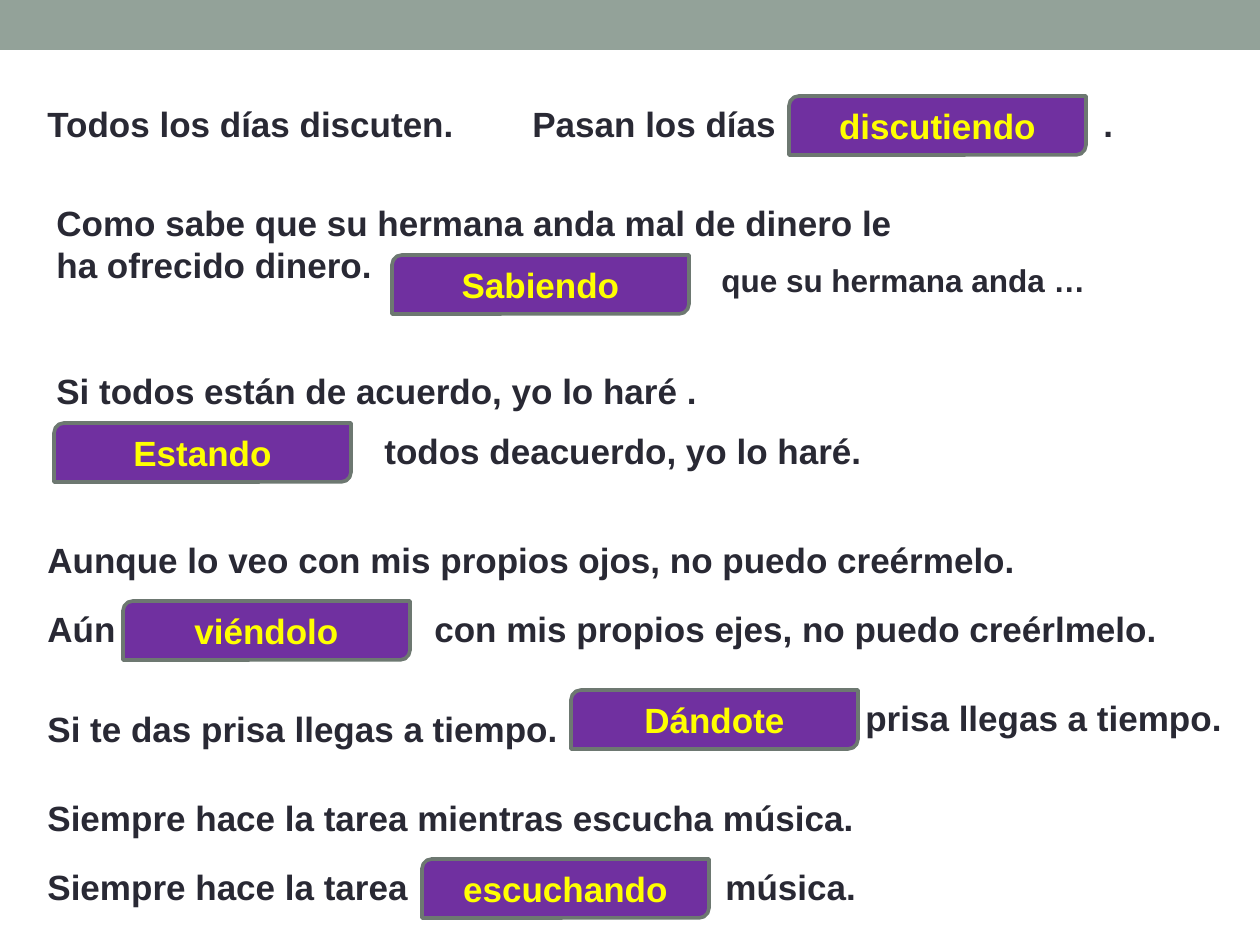
from pptx import Presentation
from pptx.dml.color import RGBColor
from pptx.enum.shapes import MSO_SHAPE as Preset
from pptx.enum.text import MSO_ANCHOR as Anchor, MSO_AUTO_SIZE as AutoSize, PP_ALIGN as Align
from pptx.util import Emu, Pt
from lxml.etree import SubElement
from pptx.oxml.ns import qn

EMU_PER_PX = 914400 / 126


def px(length):
    return Emu(round(length * EMU_PER_PX))


def color(hex_string):
    return RGBColor.from_string(hex_string)


def write(shape, text, size=20, ink="292934", align=Align.LEFT, anchor=Anchor.TOP, wrap=True, tab=None):
    frame = shape.text_frame
    frame.word_wrap = wrap
    frame.vertical_anchor = anchor
    paragraph = frame.paragraphs[0]
    paragraph.alignment = align
    if tab:
        tab_list = SubElement(paragraph._p.get_or_add_pPr(), qn("a:tabLst"))
        SubElement(tab_list, qn("a:tab"), pos=str(px(tab)), algn="l")
    run = paragraph.add_run()
    run.text = text
    run.font.name = "Arial"
    run.font.size = Pt(size)
    run.font.bold = True
    run.font.color.rgb = color(ink)


class ExerciseSlide:
    bar_fill = "93A299"
    answer_fill = "7030A0"
    answer_line = "6D7871"
    answer_ink = "FFFF00"
    answer_height = 59

    def __init__(self, presentation):
        self.slide = presentation.slides.add_slide(presentation.slide_layouts[6])

    def shape(self, preset, left, top, width, height, fill):
        shape = self.slide.shapes.add_shape(preset, px(left), px(top), px(width), px(height))
        shape.shadow.inherit = False
        shape.fill.solid()
        shape.fill.fore_color.rgb = color(fill)
        return shape

    def bar(self, width, height):
        self.shape(Preset.RECTANGLE, 0, 0, width, height, self.bar_fill).line.fill.background()

    def sentence(self, text, left, top, width, height=55, **text_format):
        box = self.slide.shapes.add_textbox(px(left), px(top), px(width), px(height))
        write(box, text, **text_format)
        box.text_frame.auto_size = AutoSize.SHAPE_TO_FIT_TEXT

    def answer(self, text, left, top, width):
        shape = self.shape(Preset.ROUND_2_DIAG_RECTANGLE, left, top, width, self.answer_height, self.answer_fill)
        shape.line.color.rgb = color(self.answer_line)
        shape.line.width = Pt(2.08)
        write(shape, text, ink=self.answer_ink, align=Align.CENTER, anchor=Anchor.MIDDLE)


def main():
    presentation = Presentation()
    presentation.slide_width, presentation.slide_height = px(1260), px(945)
    exercise = ExerciseSlide(presentation)
    exercise.bar(1260, 50)

    margin, indent = 35, 44
    wide, narrow = 297, 287

    exercise.sentence("Todos los días discuten.", margin, 96, 456)
    exercise.sentence("Pasan los días\t.", 520, 96, 645, tab=571)
    exercise.answer("discutiendo", 789, 96, wide)

    exercise.sentence("Como sabe que su hermana anda mal de dinero le ha ofrecido dinero.", indent, 195, 862, 97)
    exercise.sentence("que su hermana anda …", 709, 255, 393, 50, size=18, wrap=False)
    exercise.answer("Sabiendo", 392, 255, wide)

    exercise.sentence("Si todos están de acuerdo, yo lo haré .", indent, 363, 694)
    exercise.sentence("todos deacuerdo, yo lo haré.", 372, 423, 551)
    exercise.answer("Estando", 54, 423, wide)

    exercise.sentence("Aunque lo veo con mis propios ojos, no puedo creérmelo.", margin, 532, 1086)
    exercise.sentence("Aún\tcon mis propios ejes, no puedo creérlmelo.", margin, 601, 1196, tab=387)
    exercise.answer("viéndolo", 123, 601, narrow)

    exercise.sentence("Si te das prisa llegas a tiempo.", margin, 701, 576)
    exercise.sentence("prisa llegas a tiempo.", 853, 690, 407)
    exercise.answer("Dándote", 571, 690, narrow)

    exercise.sentence("Siempre hace la tarea mientras escucha música.", margin, 790, 862)
    exercise.sentence("Siempre hace la tarea\tmúsica.", margin, 859, 953, tab=678)
    exercise.answer("escuchando", 422, 859, narrow)

    presentation.save("out.pptx")


if __name__ == "__main__":
    main()
